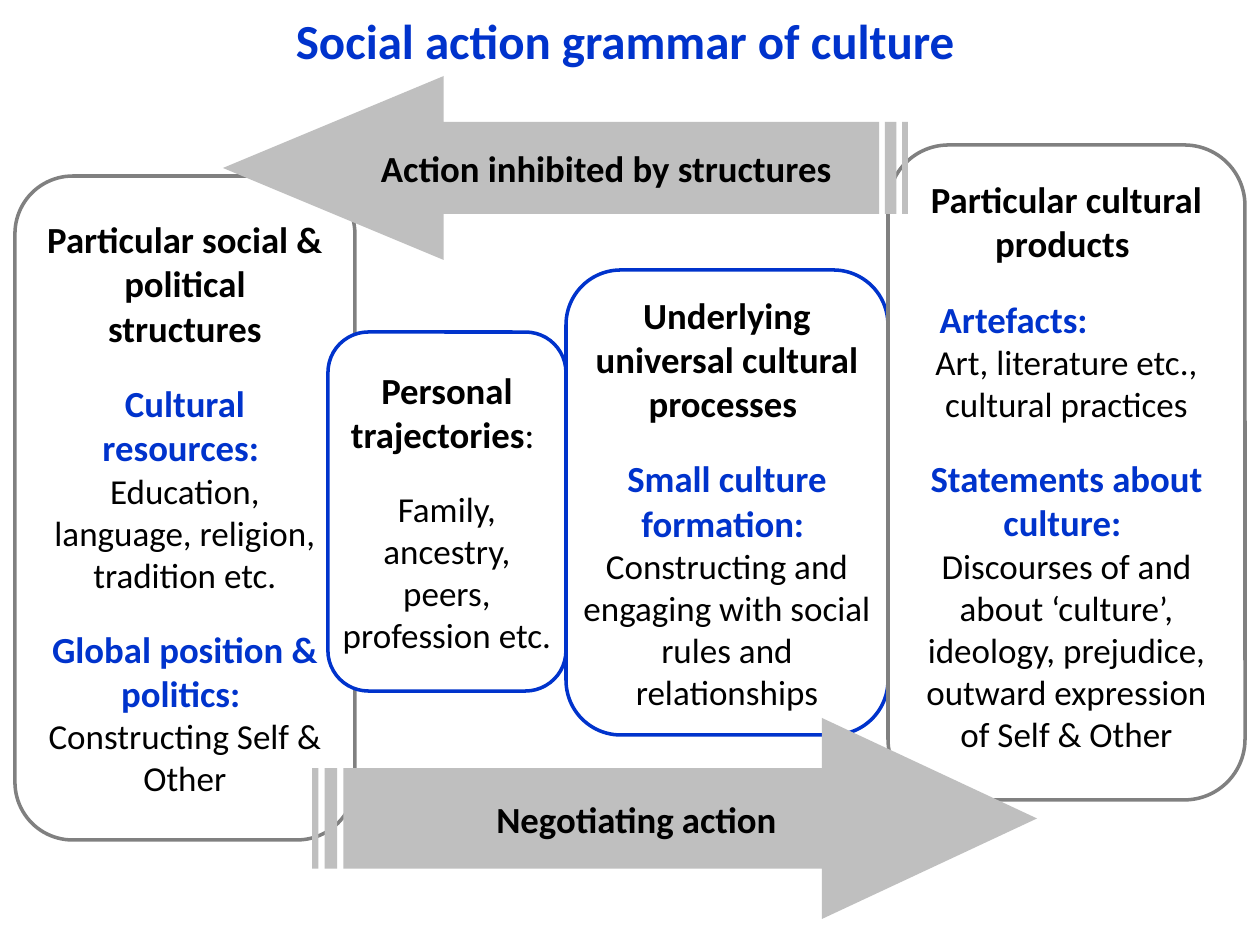
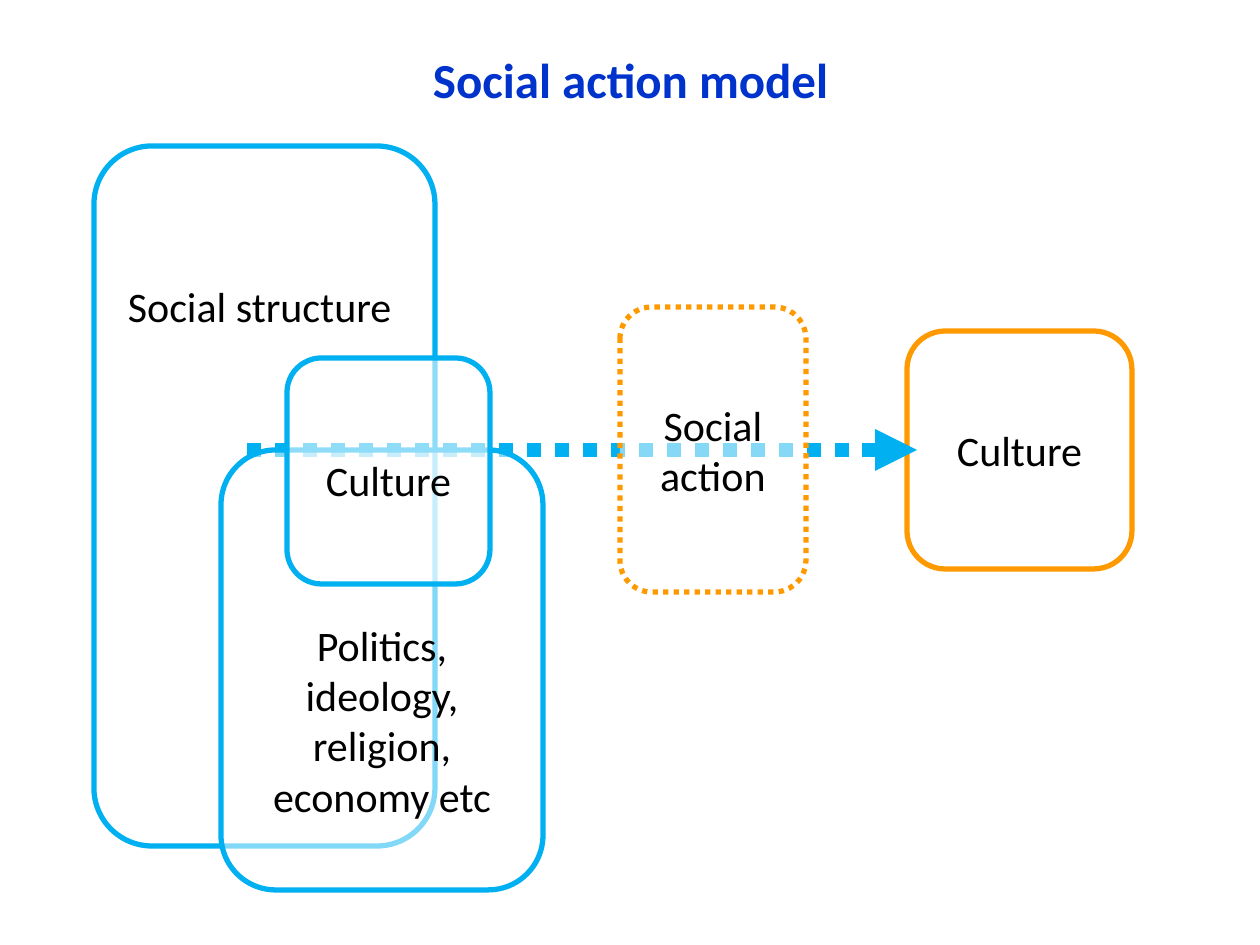
"""Build two slides on the social action grammar of culture."""
from lxml import etree
from pptx import Presentation, util as u
from pptx.dml.color import RGBColor
from pptx.enum import dml, shapes, text
from pptx.oxml import ns

PX_PER_INCH = 126
FONT = "Calibri"
COLOURS = {
    "blue": "0033CC", "black": "000000", "white": "FFFFFF", "grey": "808080",
    "silver": "BFBFBF", "sky": "00B0F0", "orange": "FF9900",
}
STYLES = {
    "title": {"size": 28, "bold": True, "colour": "blue", "before": 0, "after": 0},
    "heading": {"size": 21, "bold": True, "colour": "black", "before": 6, "after": 6},
    "topic": {"size": 21, "bold": True, "colour": "blue", "before": 12, "after": 0},
    "detail": {"size": 20, "bold": False, "colour": "black", "before": 0, "after": 6},
    "list": {"size": 20, "bold": False, "colour": "black", "before": 12, "after": 6},
    "colon": {"size": 21, "bold": False, "colour": "black"},
    "label": {"size": 24, "bold": False, "colour": "black", "before": 6, "after": 6},
}
GRAMMAR_BOXES = [
    ((15, 176, 340, 664), "grey", (13, 6, 13, 6), [
        ("heading", "Particular social & political structures"),
        ("topic", "Cultural resources: "),
        ("detail", "Education, language, religion, tradition etc."),
        ("topic", "Global position & politics: "),
        ("detail", "Constructing Self & Other")]),
    ((566, 270, 322, 465), "blue", (1, 1, 1, 1), [
        ("heading", "Underlying universal cultural processes "),
        ("topic", "Small culture formation: "),
        ("detail", "Constructing and engaging with social rules and relationships")]),
    ((328, 332, 238, 359), "blue", (1, 1, 1, 1), [
        ("heading", "Personal trajectories", ("colon", ": ")),
        ("list", "Family, ancestry, peers, profession etc.")]),
    ((888, 145, 357, 655), "grey", (13, 0, 13, 14), [
        ("heading", "Particular cultural products "),
        ("topic", "Artefacts:"),
        ("detail", "Art, literature etc., cultural practices"),
        ("topic", "Statements about culture: "),
        ("detail", "Discourses of and about ‘culture’, ideology, prejudice, "
                   "outward expression of Self & Other")]),
]
ARTEFACTS_INDENT = 21


def px(length):
    """Turn a px length into EMU."""
    return u.Emu(round(length * u.Inches(1) / PX_PER_INCH))


def colour(name):
    """Look up a named colour."""
    return RGBColor.from_string(COLOURS[name])


def apply(target, values):
    """Set each attribute in values on target."""
    for name, value in values.items():
        setattr(target, name, value)


def add_span(para, style, words):
    """Add one styled run of text."""
    span = para.add_run()
    span.text = words
    look = STYLES[style]
    apply(span.font, {"name": FONT, "size": u.Pt(look["size"]), "bold": look["bold"]})
    span.font.color.rgb = colour(look["colour"])


def write(shape, paras, insets):
    """Fill a shape with centred, styled paragraphs."""
    frame = shape.text_frame
    sides = ("margin_left", "margin_top", "margin_right", "margin_bottom")
    apply(frame, {"word_wrap": True, "vertical_anchor": text.MSO_ANCHOR.MIDDLE,
                  **{side: px(inset) for side, inset in zip(sides, insets)}})
    for index, (style, words, *more) in enumerate(paras):
        para = frame.add_paragraph() if index else frame.paragraphs[0]
        look = STYLES[style]
        apply(para, {"alignment": text.PP_ALIGN.CENTER,
                     "space_before": u.Pt(look["before"]),
                     "space_after": u.Pt(look["after"])})
        for span_style, span_words in [(style, words), *more]:
            add_span(para, span_style, span_words)


def place(shape, bounds):
    """Move and size a shape."""
    apply(shape, dict(zip(("left", "top", "width", "height"), map(px, bounds))))


def add_page(deck, title, top):
    """Add a slide with its title at the given top."""
    page = deck.slides.add_slide(deck.slide_layouts[5])
    place(page.shapes.title, (95, top, 1071, 73))
    write(page.shapes.title, [("title", title)], (13, 6, 13, 6))
    return page


def add_filled(page, kind, bounds, fill, adjustments):
    """Add a flat preset shape with a solid fill."""
    shape = page.shapes.add_shape(kind, *map(px, bounds))
    shape.shadow.inherit = False
    shape.fill.solid()
    shape.fill.fore_color.rgb = colour(fill)
    for index, value in enumerate(adjustments):
        shape.adjustments[index] = value
    return shape


def add_box(page, bounds, outline, insets, paras, width=2, opacity=100, dash=None):
    """Add a white rounded box with an outline and text."""
    box = add_filled(page, shapes.MSO_SHAPE.ROUNDED_RECTANGLE, bounds, "white", [0.17])
    box.line.color.rgb = colour(outline)
    apply(box.line, {"width": u.Pt(width), "dash_style": dash})
    if opacity < 100:
        shade = box.fill._xPr.find(".//" + ns.qn("a:srgbClr"))
        etree.SubElement(shade, ns.qn("a:alpha"), val=str(opacity * 1000))
    write(box, paras, insets)
    return box


def add_block_arrow(page, bounds, head, words, flipped=False):
    """Add a striped block arrow, pointing left when flipped."""
    arrow = add_filled(page, shapes.MSO_SHAPE.STRIPED_RIGHT_ARROW, bounds, "silver",
                       [0.5, head])
    arrow.line.fill.background()
    if flipped:
        arrow._element.spPr.find(ns.qn("a:xfrm")).set("flipH", "1")
    write(arrow, [("heading", words)], (1, 1, 1, 1))


def add_dotted_arrow(page, left, right, level):
    """Add a thick dotted horizontal arrow."""
    arrow = page.shapes.add_connector(shapes.MSO_CONNECTOR.STRAIGHT,
                                      px(left), px(level), px(right), px(level))
    arrow.line.color.rgb = colour("sky")
    apply(arrow.line, {"width": u.Pt(8), "dash_style": dml.MSO_LINE.ROUND_DOT})
    etree.SubElement(arrow.line._get_or_add_ln(), ns.qn("a:tailEnd"), type="triangle")
    etree.SubElement(arrow._element.spPr, ns.qn("a:effectLst"))


def build_grammar(deck):
    """Build the slide on the grammar of culture."""
    page = add_page(deck, "Social action grammar of culture ", 3)
    for bounds, outline, insets, paras in GRAMMAR_BOXES:
        box = add_box(page, bounds, outline, insets, paras)
    artefacts = box.text_frame.paragraphs[1]
    artefacts.alignment = text.PP_ALIGN.LEFT
    artefacts._p.get_or_add_pPr().set("marL", str(px(ARTEFACTS_INDENT)))
    add_block_arrow(page, (312, 718, 725, 201), 1.07, "Negotiating action")
    add_block_arrow(page, (223, 76, 685, 184), 1.2, "Action inhibited by structures",
                    flipped=True)


def build_model(deck):
    """Build the slide on the social action model."""
    page = add_page(deck, "Social action model", 42)

    def add_part(bounds, outline, words, above=6, below=6, **look):
        """Add one labelled part of the model."""
        add_box(page, bounds, outline, (6, above, 6, below), [("label", words)],
                width=3, **look)

    add_part((94, 146, 341, 700), "sky", "Social structure ", below=386)
    add_part((907, 331, 225, 238), "orange", "Culture")
    add_dotted_arrow(page, 247, 917, 450)
    add_part((620, 307, 186, 285), "orange", "Social action", opacity=52,
             dash=dml.MSO_LINE.ROUND_DOT)
    add_part((221, 450, 322, 440), "sky", "Politics, ideology, religion, economy etc",
             above=106, opacity=51)
    add_part((287, 358, 203, 226), "sky", "Culture", above=24, opacity=56)


def main():
    """Build and save the deck."""
    deck = Presentation()
    apply(deck, {"slide_width": px(1260), "slide_height": px(945)})
    build_grammar(deck)
    build_model(deck)
    deck.save("out.pptx")


if __name__ == "__main__":
    main()
